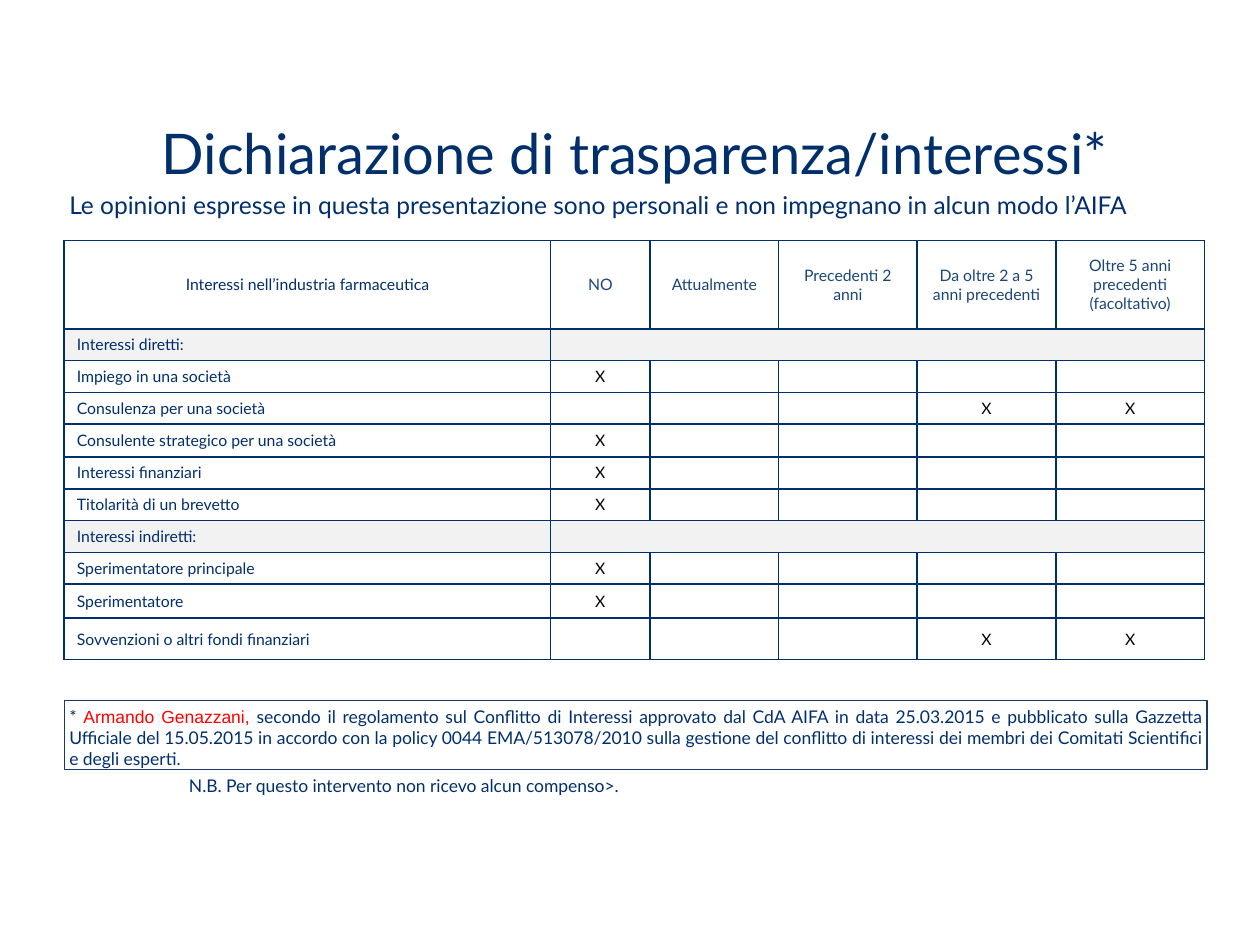
"""Builds a one-slide declaration of interests with a table and notes."""
from dataclasses import dataclass
from typing import NamedTuple

from lxml import etree
from pptx import Presentation
from pptx import util as u
from pptx.dml.color import RGBColor
from pptx.enum import shapes, text
from pptx.oxml import ns

ALIGN = text.PP_ALIGN
ANCHOR = text.MSO_ANCHOR


@dataclass(frozen=True)
class Theme:
    navy: str = "002F6C"
    steel: str = "1B4677"
    frame: str = "1A386D"
    red: str = "FF0000"
    black: str = "000000"
    band: str = "F2F2F2"
    font: str = "Lato"
    name_font: str = "Arial"
    title: float = 32
    subtitle: float = 14
    note: float = 10
    cell: float = 9
    inset: float = 0.04
    border: float = 1


class Box(NamedTuple):
    left: float
    top: float
    width: float
    height: float


class Span(NamedTuple):
    words: str
    size: float
    color: str
    font: str


class Row(NamedTuple):
    label: str
    height: float
    marks: tuple = ()
    section: bool = False


THEME = Theme()
NO, OLDER = (1,), (4, 5)
COLUMNS = (3.86, 0.79, 1.02, 1.1, 1.1, 1.18)
HEADER_HEIGHT = 0.7
HEADERS = (
    "Interessi nell’industria farmaceutica", "NO", "Attualmente",
    "Precedenti 2 anni", "Da oltre 2 a 5 anni precedenti",
    "Oltre 5 anni precedenti\n(facoltativo)",
)
ROWS = (
    Row("Interessi diretti:", 0.25, section=True),
    Row("Impiego in una società", 0.25, NO),
    Row("Consulenza per una società", 0.25, OLDER),
    Row("Consulente strategico per una società", 0.26, NO),
    Row("Interessi finanziari", 0.25, NO),
    Row("Titolarità di un brevetto", 0.25, NO),
    Row("Interessi indiretti:", 0.25, section=True),
    Row("Sperimentatore principale", 0.25, NO),
    Row("Sperimentatore", 0.27, NO),
    Row("Sovvenzioni o altri fondi finanziari", 0.33, OLDER),
)
TITLE = Box(0.59, 0.9, 8.9, 0.49)
SUBTITLE = Box(0.51, 1.47, 9.07, 0.39)
TABLE = Box(0.51, 1.91, sum(COLUMNS), HEADER_HEIGHT + sum(row.height for row in ROWS))
FOOTNOTE = Box(0.51, 5.56, 9.07, 0.55)
REMARK = Box(1.46, 6.11, 8.13, 0.47)


def apply(target, values: dict) -> None:
    for name, value in values.items():
        setattr(target, name, value)


def add_spans(paragraph, spans: list[Span], align) -> None:
    paragraph.alignment = align
    for span in spans:
        run = paragraph.add_run()
        run.text = span.words
        apply(run.font, {"size": u.Pt(span.size), "name": span.font, "bold": False})
        run.font.color.rgb = RGBColor.from_string(span.color)


def fill_box(shape, box: Box, spans: list[Span], align=ALIGN.LEFT) -> None:
    apply(shape, {side: u.Inches(value) for side, value in box._asdict().items()})
    frame = shape.text_frame
    margins = ("margin_left", "margin_top", "margin_right", "margin_bottom")
    apply(frame, dict.fromkeys(margins, u.Inches(THEME.inset)))
    apply(frame, {"word_wrap": True, "auto_size": text.MSO_AUTO_SIZE.NONE,
                  "vertical_anchor": ANCHOR.TOP})
    paragraph = frame.paragraphs[0]
    apply(paragraph, {"line_spacing": 1.0, "space_before": u.Pt(0)})
    add_spans(paragraph, spans, align)


def navy_span(words: str, size: float) -> Span:
    return Span(words, size, THEME.navy, THEME.font)


def add_borders(cell) -> None:
    properties = cell._tc.get_or_add_tcPr()
    for index, side in enumerate(("a:lnL", "a:lnR", "a:lnT", "a:lnB")):
        line = etree.Element(ns.qn(side), w=str(u.Pt(THEME.border)))
        fill = etree.SubElement(line, ns.qn("a:solidFill"))
        etree.SubElement(fill, ns.qn("a:srgbClr"), val=THEME.navy)
        properties.insert(index, line)


def write_cell(cell, words: str, color: str, align) -> None:
    cell.vertical_anchor = ANCHOR.MIDDLE
    frame = cell.text_frame
    for index, line in enumerate(words.split("\n")):
        paragraph = frame.add_paragraph() if index else frame.paragraphs[0]
        if line:
            add_spans(paragraph, [Span(line, THEME.cell, color, THEME.font)], align)
        else:
            etree.SubElement(paragraph._p, ns.qn("a:endParaRPr"), sz=str(THEME.cell * 100))


def add_interest_table(slide) -> None:
    frame = slide.shapes.add_table(
        len(ROWS) + 1, len(COLUMNS), *(u.Inches(value) for value in TABLE))
    table = frame.table
    apply(table, {"first_row": False, "horz_banding": False})
    for column, width in zip(table.columns, COLUMNS):
        column.width = u.Inches(width)
    for table_row, height in zip(table.rows, (HEADER_HEIGHT, *(row.height for row in ROWS))):
        table_row.height = u.Inches(height)
    for index, words in enumerate(HEADERS):
        write_cell(table.cell(0, index), words,
                   THEME.steel if index else THEME.navy, ALIGN.CENTER)
    for number, row in enumerate(ROWS, start=1):
        write_cell(table.cell(number, 0), row.label, THEME.navy, ALIGN.LEFT)
        for index in range(1, len(COLUMNS)):
            write_cell(table.cell(number, index), "X" if index in row.marks else "",
                       THEME.black, ALIGN.CENTER)
        if row.section:
            table.cell(number, 1).merge(table.cell(number, len(COLUMNS) - 1))
    for number, table_row in enumerate(table.rows):
        for cell in table_row.cells:
            if number and ROWS[number - 1].section:
                cell.fill.solid()
                cell.fill.fore_color.rgb = RGBColor.from_string(THEME.band)
            else:
                cell.fill.background()
            add_borders(cell)


def add_footnote(slide) -> None:
    shape = slide.shapes.add_shape(
        shapes.MSO_SHAPE.RECTANGLE, *(u.Inches(value) for value in FOOTNOTE))
    shape.shadow.inherit = False
    shape.fill.background()
    shape.line.color.rgb = RGBColor.from_string(THEME.frame)
    shape.line.width = u.Pt(0.75)
    fill_box(shape, FOOTNOTE, [
        navy_span("* ", THEME.note),
        Span("Armando Genazzani, ", THEME.note, THEME.red, THEME.name_font),
        navy_span("secondo il regolamento sul Conflitto di Interessi approvato dal CdA AIFA "
                  "in data 25.03.2015 e pubblicato sulla Gazzetta Ufficiale del 15.05.2015 "
                  "in accordo con la policy 0044 EMA/513078/2010 sulla gestione del conflitto "
                  "di interessi dei membri dei Comitati Scientifici e degli esperti.",
                  THEME.note),
    ], ALIGN.JUSTIFY)


def add_label(slide, box: Box, words: str, size: float) -> None:
    shape = slide.shapes.add_textbox(*(u.Inches(value) for value in box))
    fill_box(shape, box, [navy_span(words, size)])


def main() -> None:
    presentation = Presentation()
    apply(presentation, {"slide_width": u.Inches(10), "slide_height": u.Inches(7.5)})
    slide = presentation.slides.add_slide(presentation.slide_layouts[5])
    fill_box(slide.shapes.title, TITLE,
             [navy_span("Dichiarazione di trasparenza/interessi*", THEME.title)], ALIGN.CENTER)
    add_label(slide, SUBTITLE, "Le opinioni espresse in questa presentazione sono personali "
              "e non impegnano in alcun modo l’AIFA", THEME.subtitle)
    add_interest_table(slide)
    add_footnote(slide)
    add_label(slide, REMARK, "N.B. Per questo intervento non ricevo alcun compenso>.", THEME.note)
    presentation.save("out.pptx")


if __name__ == "__main__":
    main()
